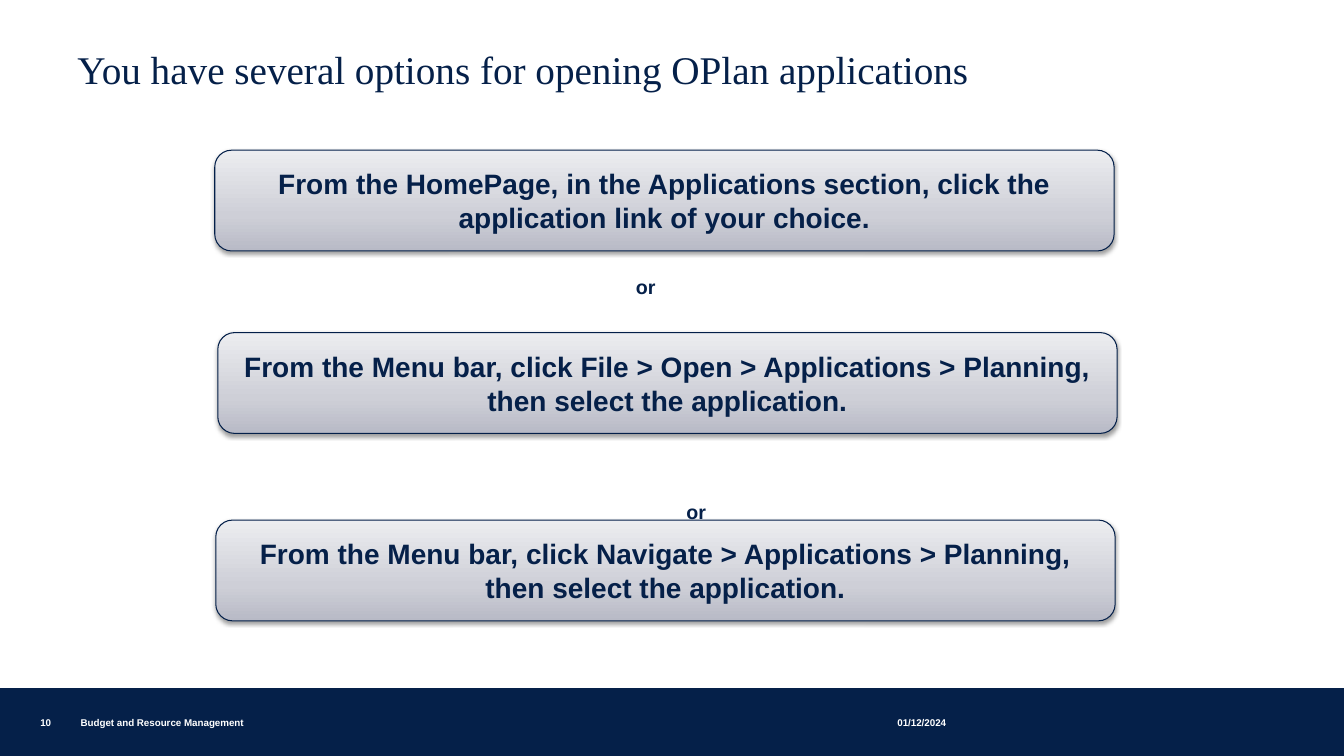
from typing import NamedTuple

from pptx import Presentation, oxml, util as u
from pptx.dml.color import RGBColor
from pptx.enum import shapes as s, text as t
from pptx.oxml import ns

PX = 9144  # EMU per px, 100 px to the inch
NAVY = RGBColor(0x05, 0x20, 0x49)
EDGE = RGBColor(0x03, 0x1F, 0x49)
WHITE = RGBColor(0xFF, 0xFF, 0xFF)
BLACK = RGBColor(0x00, 0x00, 0x00)
STOPS = (
    (0, RGBColor(0xB8, 0xBA, 0xC6)),
    (35, RGBColor(0xCE, 0xCF, 0xD7)),
    (100, RGBColor(0xEC, 0xED, 0xF0)),
)


class Box(NamedTuple):
    left: int
    top: int
    width: int
    height: int

    def emu(self) -> list[int]:
        return [side * PX for side in self]


class Style(NamedTuple):
    size: int
    color: RGBColor
    bold: bool = True
    face: str = "Arial"
    align: t.PP_ALIGN = t.PP_ALIGN.LEFT
    anchor: t.MSO_ANCHOR = t.MSO_ANCHOR.TOP
    inset: bool = True
    space: float = 1.0


class Label(NamedTuple):
    text: str
    box: Box
    style: Style


class Option(NamedTuple):
    text: str
    left: int
    top: int


TITLE = Style(28, NAVY, bold=False, face="Times New Roman", space=0.85)
CARD = Style(20, NAVY, align=t.PP_ALIGN.CENTER, anchor=t.MSO_ANCHOR.MIDDLE)
OR = Style(14, NAVY, align=t.PP_ALIGN.RIGHT)
FOOT = Style(7, WHITE, anchor=t.MSO_ANCHOR.BOTTOM, inset=False)

OPTIONS = (
    Option("From the HomePage, in the Applications section, click the "
           "application link of your choice.", 213, 149),
    Option("From the Menu bar, click File > Open > Applications > Planning, "
           "then select the application.", 216, 330),
    Option("From the Menu bar, click Navigate > Applications > Planning, "
           "then select the application.", 214, 516),
)
LABELS = (
    Label("You have several options for opening OPlan applications",
          Box(67, 47, 1180, 50), TITLE),
    Label("or", Box(609, 268, 51, 34), OR),
    Label("or", Box(659, 491, 51, 34), OR),
    Label("10", Box(40, 706, 36, 17), FOOT),
    Label("Budget and Resource Management", Box(80, 708, 629, 15), FOOT),
    Label("01/12/2024", Box(890, 706, 135, 17), FOOT),
)


def write(shape, words: str, style: Style) -> None:
    frame = shape.text_frame
    frame.word_wrap = True
    frame.vertical_anchor = style.anchor
    if not style.inset:
        frame.margin_left = frame.margin_right = 0
        frame.margin_top = frame.margin_bottom = 0
    para = frame.paragraphs[0]
    para.text = words
    para.alignment = style.align
    para.line_spacing = style.space
    font = para.font
    font.name, font.size, font.bold = style.face, u.Pt(style.size), style.bold
    font.color.rgb = style.color


def shade(shape) -> None:
    """Give a shape the upward grey gradient and a soft shadow below."""
    props = shape._element.spPr
    stops = "".join(
        f'<a:gs pos="{pos * 1000}"><a:srgbClr val="{color}"/></a:gs>'
        for pos, color in STOPS)
    props.append(oxml.parse_xml(
        f'<a:gradFill {ns.nsdecls("a")} rotWithShape="1"><a:gsLst>{stops}'
        '</a:gsLst><a:lin ang="16200000" scaled="0"/></a:gradFill>'))
    shape.shadow.inherit = False
    props.find(ns.qn("a:effectLst")).append(oxml.parse_xml(
        f'<a:outerShdw {ns.nsdecls("a")} blurRad="{u.Pt(3.1)}" '
        f'dist="{u.Pt(1.6)}" dir="5400000" rotWithShape="0">'
        f'<a:srgbClr val="{BLACK}"><a:alpha val="38000"/></a:srgbClr>'
        '</a:outerShdw>'))


def add_band(slide) -> None:
    band = slide.shapes.add_shape(
        s.MSO_SHAPE.RECTANGLE, *Box(0, 684, 1333, 66).emu())
    band.shadow.inherit = False
    band.fill.solid()
    band.fill.fore_color.rgb = NAVY
    band.line.color.rgb = NAVY
    band.line.width = u.Pt(1.5)


def add_card(slide, option: Option) -> None:
    card = slide.shapes.add_shape(
        s.MSO_SHAPE.ROUNDED_RECTANGLE,
        *Box(option.left, option.top, 892, 100).emu())
    shade(card)
    card.line.color.rgb = EDGE
    card.line.width = u.Pt(0.75)
    write(card, option.text, CARD)


def add_label(slide, label: Label) -> None:
    write(slide.shapes.add_textbox(*label.box.emu()), label.text, label.style)


def main() -> None:
    deck = Presentation()
    deck.slide_width, deck.slide_height = 1333 * PX, 750 * PX
    slide = deck.slides.add_slide(deck.slide_layouts[6])
    add_band(slide)
    for option in OPTIONS:
        add_card(slide, option)
    for label in LABELS:
        add_label(slide, label)
    deck.save("out.pptx")


if __name__ == "__main__":
    main()
